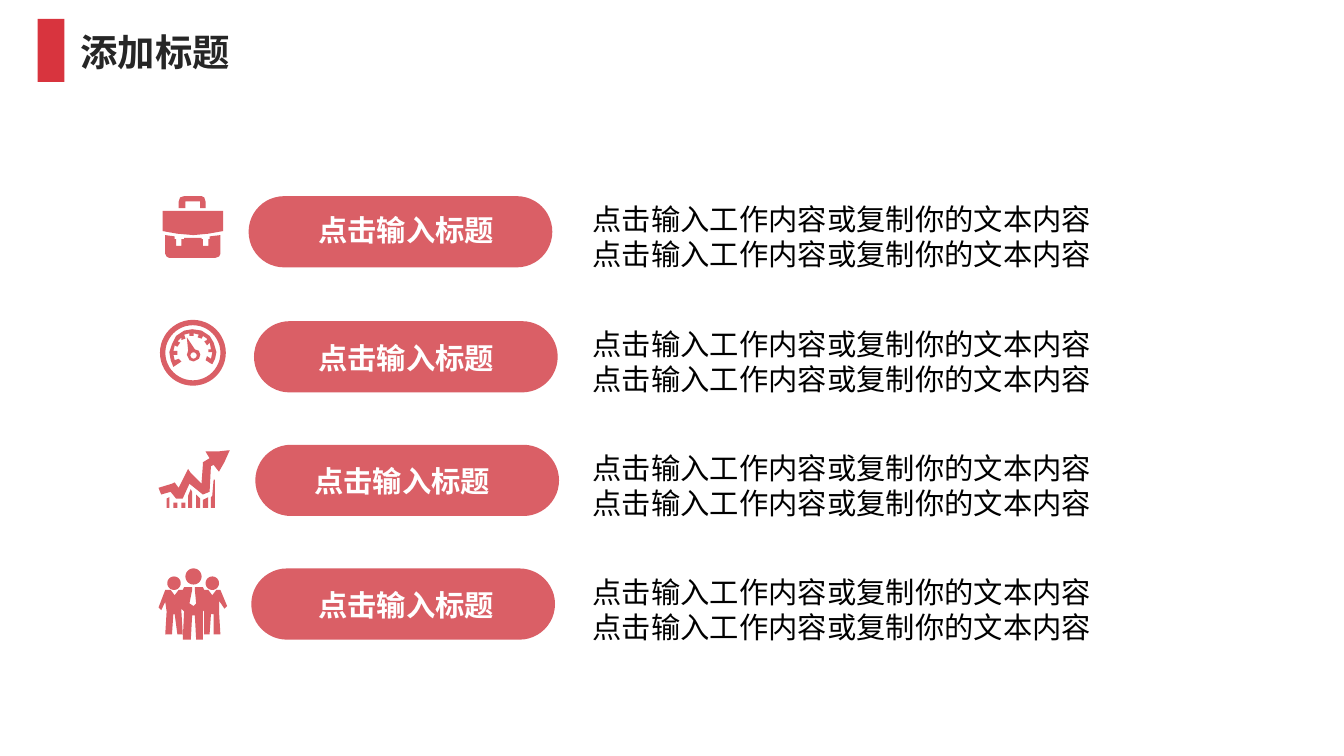
import math
import lxml.etree
import pptx
import pptx.dml.color
import pptx.enum.shapes
import pptx.enum.text
import pptx.oxml.ns
import pptx.util

PX = 9144
RGB = pptx.dml.color.RGBColor.from_string
theme = {
    "accent": RGB("D8343E"),
    "soft": RGB("DA5F66"),
    "typeface": "Noto Sans CJK SC",
    "title": {"size": pptx.util.Pt(20), "bold": True, "color": RGB("262626")},
    "label": {"size": pptx.util.Pt(15.7), "bold": True, "color": RGB("FFFFFF")},
    "body": {"size": pptx.util.Pt(15.7), "bold": False, "color": RGB("000000")},
}

presentation = pptx.Presentation()
presentation.slide_width = 1000 * PX
presentation.slide_height = pptx.util.Inches(5.625)
slide = presentation.slides.add_slide(presentation.slide_layouts[6])


def add_text(box, lines, style, wrap):
    frame = slide.shapes.add_textbox(*[value * PX for value in box]).text_frame
    frame.word_wrap = wrap
    frame.auto_size = pptx.enum.text.MSO_AUTO_SIZE.SHAPE_TO_FIT_TEXT
    for index, line in enumerate(lines):
        paragraph = frame.add_paragraph() if index else frame.paragraphs[0]
        run = paragraph.add_run()
        run.text = line
        run.font.color.rgb = theme[style]["color"]
        values = {"name": theme["typeface"], "size": theme[style]["size"], "bold": theme[style]["bold"]}
        for name, value in values.items():
            setattr(run.font, name, value)
        properties = run._r.get_or_add_rPr()
        lxml.etree.SubElement(properties, pptx.oxml.ns.qn("a:ea"), typeface=theme["typeface"])


def circle(x, y, radius):
    angles = [math.tau * step / 48 for step in range(48)]
    return [(x + radius * math.cos(angle), y + radius * math.sin(angle)) for angle in angles]


briefcase = [
    [(164, 175), (164, 189), (163, 191), (160, 192), (126, 192), (124, 191), (123, 189), (123, 175),
     (130, 176), (130, 178), (131, 178), (131, 183), (135, 183), (135, 178), (137, 178), (137, 177),
     (150, 177), (150, 178), (151, 178), (151, 183), (155, 183), (155, 178), (156, 178), (156, 176)],
    [(137, 146), (150, 146), (152, 147), (153, 150), (153, 155), (149, 155), (149, 150), (138, 150),
     (138, 155), (133, 155), (133, 150), (134, 147)],
    [(121, 157), (121, 172), (132, 174), (144, 175), (155, 174), (166, 172), (166, 157)],
]
gauge = [
    circle(143.5, 262.5, 24.5),
    circle(143.5, 262.5, 20.5),
    [(130, 268), (129, 264), (132, 264), (132, 261), (129, 261), (130, 257), (132, 258), (134, 255),
     (132, 254), (135, 251), (135, 253), (138, 252), (137, 249), (141, 248), (141, 250), (144, 250),
     (144, 248), (148, 249), (147, 251), (150, 252), (151, 250), (154, 252), (154, 253), (152, 254),
     (154, 257), (156, 255), (157, 260), (155, 260), (155, 262), (158, 262), (157, 267), (154, 265),
     (153, 268), (156, 270), (158, 271), (160, 267), (161, 262), (159, 255), (156, 250), (150, 246),
     (143, 245), (137, 246), (131, 250), (128, 256), (126, 262), (127, 268), (129, 273), (132, 271),
     (135, 269), (133, 267)],
    [(140, 261), (139, 251), (145, 260), (148, 261), (149, 264), (148, 267), (144, 269), (141, 268),
     (139, 264)],
    circle(144, 264.5, 2.3),
]
growth = [
    [(171, 335), (167, 344), (163, 351), (159, 346), (157, 347), (156, 366), (151, 368), (141, 360),
     (136, 371), (131, 371), (127, 366), (120, 368), (118, 363), (128, 360), (130, 359), (133, 363),
     (138, 353), (140, 349), (142, 352), (150, 360), (151, 346), (151, 344), (156, 341), (153, 336),
     (162, 336)],
    [(157, 378), (160, 378), (160, 357), (159, 357), (158, 369), (157, 370)],
    [(129, 378), (132, 378), (132, 374), (129, 374)],
    [(124, 378), (126, 378), (126, 370), (124, 371)],
    [(135, 378), (138, 378), (138, 374), (135, 374)],
    [(140, 378), (143, 378), (143, 366), (142, 364), (140, 369)],
    [(146, 378), (149, 378), (149, 371), (146, 368)],
    [(151, 378), (155, 378), (155, 370), (151, 372)],
]
team = [
    circle(144, 429, 6),
    circle(158, 434, 5),
    circle(129.5, 434, 5),
    [(135, 453), (135, 455), (136, 472), (132, 472), (130, 457), (129, 457), (128, 472), (123, 472),
     (124, 455), (123, 448), (120, 454), (118, 452), (123, 439), (127, 439), (130, 443), (133, 439),
     (136, 439), (137, 437), (143, 437), (143, 439), (141, 449), (144, 451), (146, 449), (145, 439),
     (145, 437), (151, 437), (152, 439), (155, 439), (158, 443), (161, 439), (164, 439), (169, 451),
     (167, 453), (163, 447), (163, 455), (164, 472), (159, 472), (159, 457), (157, 457), (156, 472),
     (152, 472), (152, 454), (151, 455), (151, 476), (146, 476), (145, 458), (143, 458), (142, 476),
     (136, 476), (137, 455)],
]

rows = [
    (briefcase, 185, 146, 227, 153),
    (gauge, 189, 239, 227, 248),
    (growth, 190, 331, 224, 340),
    (team, 187, 423, 227, 432),
]

kinds = pptx.enum.shapes.MSO_SHAPE
marker = slide.shapes.add_shape(kinds.RECTANGLE, 28 * PX, 14 * PX, 20 * PX, 47 * PX)
filled = [(marker, "accent")]
add_text((50, 17, 132, 44), ["添加标题"], "title", False)

for icon, pill_left, pill_top, label_left, label_top in rows:
    pill = slide.shapes.add_shape(
        kinds.ROUNDED_RECTANGLE, pill_left * PX, pill_top * PX, 226 * PX, 53 * PX)
    pill.adjustments[0] = 0.5
    outlines = [[(x * PX, y * PX) for x, y in outline] for outline in icon]
    builder = slide.shapes.build_freeform(*outlines[0][0], scale=1)
    for outline in outlines:
        builder.move_to(*outline[0])
        builder.add_line_segments(outline[1:], close=True)
    filled += [(pill, "soft"), (builder.convert_to_shape(), "soft")]
    add_text((label_left, label_top, 153, 37), ["点击输入标题"], "label", False)
    add_text((431, pill_top - 1, 472, 63), ["点击输入工作内容或复制你的文本内容"] * 2, "body", True)

for shape, color in filled:
    shape.shadow.inherit = False
    shape.fill.solid()
    shape.fill.fore_color.rgb = theme[color]
    shape.line.fill.background()

presentation.save("out.pptx")
